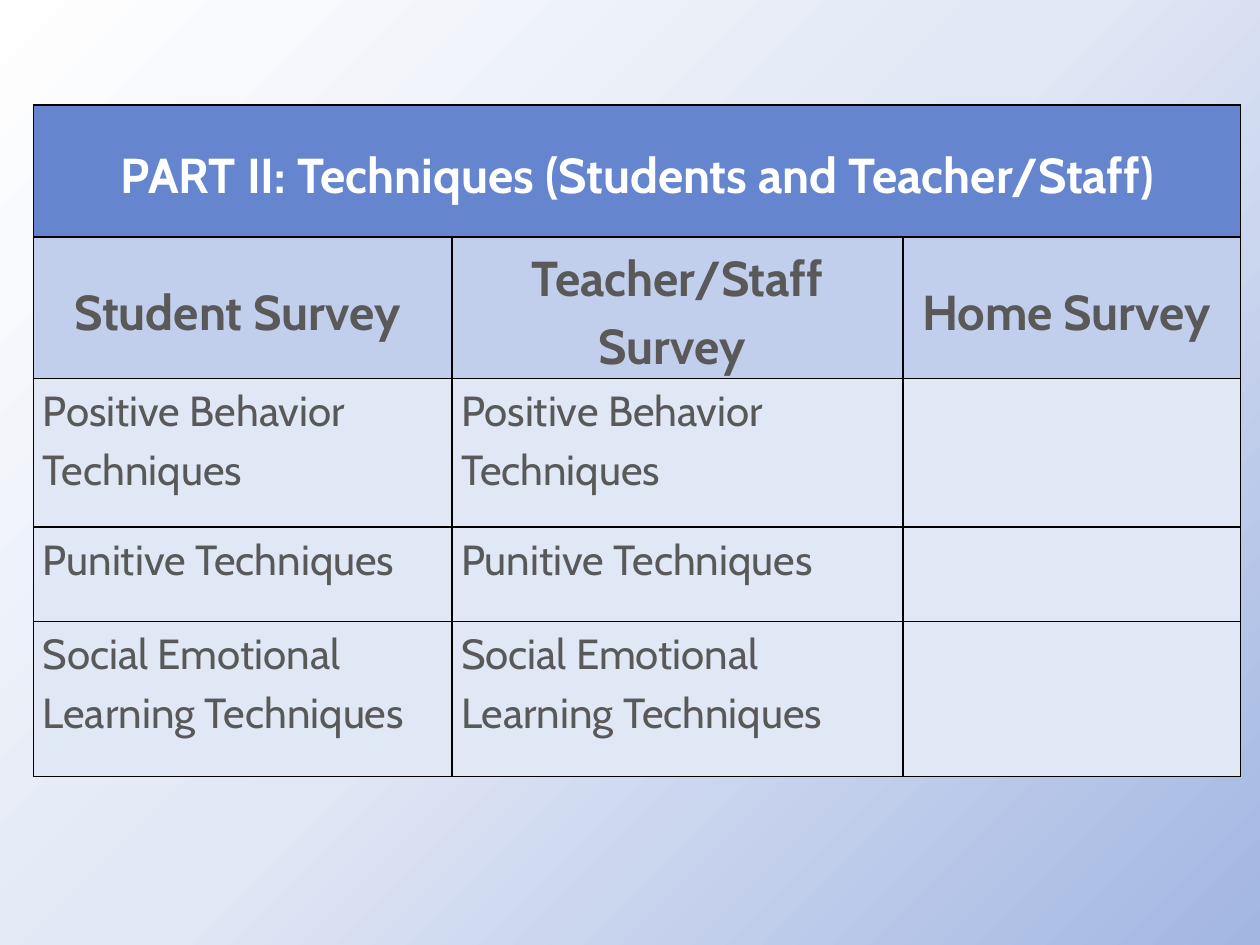
from pptx import Presentation
from pptx.dml.color import RGBColor
from pptx.enum.text import MSO_ANCHOR as Anchor, PP_ALIGN as Align
from pptx.oxml import parse_xml
from pptx.oxml.ns import nsdecls, qn
from pptx.util import Pt

FONT = "Cabin"
DARK = "595959"
COLUMN_WIDTHS = [239, 257.75, 193]
ROW_HEIGHTS = [75.5, 80.75, 85, 54, 88.5]

TITLE = "PART II: Techniques (Students and Teacher/Staff)"
SURVEYS = ["Student Survey ", "Teacher/Staff Survey ", "Home Survey "]
TECHNIQUES = [
    "Positive Behavior Techniques",
    "Punitive Techniques",
    "Social Emotional Learning Techniques",
]

# Formats of the three kinds of cell
HEADING_CELL = {
    "vertical_anchor": Anchor.MIDDLE,
    "margin_left": Pt(2), "margin_right": Pt(2),
    "margin_top": Pt(0.75), "margin_bottom": Pt(0),
}
BODY_CELL = {
    "vertical_anchor": Anchor.TOP,
    "margin_left": Pt(5.25), "margin_right": Pt(5.25),
    "margin_top": Pt(0), "margin_bottom": Pt(0),
}
HEADING_PARAGRAPH = {"alignment": Align.CENTER, "line_spacing": 1.15, "space_after": Pt(10)}
BODY_PARAGRAPH = {"alignment": Align.LEFT, "line_spacing": 1.15}
HEADING_FONT = {"name": FONT, "size": Pt(28), "bold": True}
BODY_FONT = {"name": FONT, "size": Pt(24), "bold": False}

HEADING = (HEADING_CELL, HEADING_PARAGRAPH, HEADING_FONT)
BODY = (BODY_CELL, BODY_PARAGRAPH, BODY_FONT)


def color(hex_string):
    return RGBColor.from_string(hex_string)


def apply(target, values):
    for name, value in values.items():
        setattr(target, name, value)


def set_background(slide, stops):
    """Radial gradient that starts in the bottom right corner."""
    stop_xml = "".join(
        f'<a:gs pos="{percent * 1000}"><a:srgbClr val="{color(hex_string)}"/></a:gs>'
        for percent, hex_string in stops
    )
    background = parse_xml(
        f'<p:bg {nsdecls("p", "a")}><p:bgPr><a:gradFill rotWithShape="1">'
        f'<a:gsLst>{stop_xml}</a:gsLst>'
        '<a:path path="circle"><a:fillToRect l="100000" t="100000"/></a:path>'
        '</a:gradFill><a:effectLst/></p:bgPr></p:bg>'
    )
    slide.element.find(qn("p:cSld")).insert(0, background)


def add_borders(cell, hex_string, width):
    properties = cell._tc.get_or_add_tcPr()
    for index, side in enumerate(("lnL", "lnR", "lnT", "lnB")):
        properties.insert(index, parse_xml(
            f'<a:{side} {nsdecls("a")} w="{Pt(width)}"><a:solidFill>'
            f'<a:srgbClr val="{color(hex_string)}"/></a:solidFill></a:{side}>'
        ))


def fill_cell(cell, text, formats, fill, text_color):
    cell_format, paragraph_format, font_format = formats
    apply(cell, cell_format)
    cell.fill.solid()
    cell.fill.fore_color.rgb = color(fill)
    add_borders(cell, "000000", 1)
    if text:
        paragraph = cell.text_frame.paragraphs[0]
        apply(paragraph, paragraph_format)
        run = paragraph.add_run()
        run.text = text
        apply(run.font, font_format)
        run.font.color.rgb = color(text_color)


def add_survey_table(slide):
    frame = slide.shapes.add_table(
        len(ROW_HEIGHTS), len(COLUMN_WIDTHS), Pt(19.25), Pt(60),
        Pt(sum(COLUMN_WIDTHS)), Pt(sum(ROW_HEIGHTS)),
    )
    table = frame.table
    apply(table, {"first_row": False, "horz_banding": False})
    for column, width in zip(table.columns, COLUMN_WIDTHS):
        column.width = Pt(width)
    for row, height in zip(table.rows, ROW_HEIGHTS):
        row.height = Pt(height)
    table.cell(0, 0).merge(table.cell(0, len(COLUMN_WIDTHS) - 1))

    # Title, survey names, then one row for each technique
    rows = [
        ([TITLE, "", ""], HEADING, "6585CF", "FFFFFF"),
        (SURVEYS, HEADING, "C1CEEC", DARK),
    ]
    rows += [([name, name, ""], BODY, "E0E7F5", DARK) for name in TECHNIQUES]
    for row, (texts, *style) in zip(table.rows, rows):
        for cell, text in zip(row.cells, texts):
            fill_cell(cell, text, *style)


def main():
    presentation = Presentation()
    apply(presentation, {"slide_width": Pt(720), "slide_height": Pt(540)})
    slide = presentation.slides.add_slide(presentation.slide_layouts[6])
    set_background(slide, [(0, "A3B6E2"), (50, "E0E7F5"), (100, "FFFFFF")])
    add_survey_table(slide)
    presentation.save("out.pptx")


if __name__ == "__main__":
    main()
